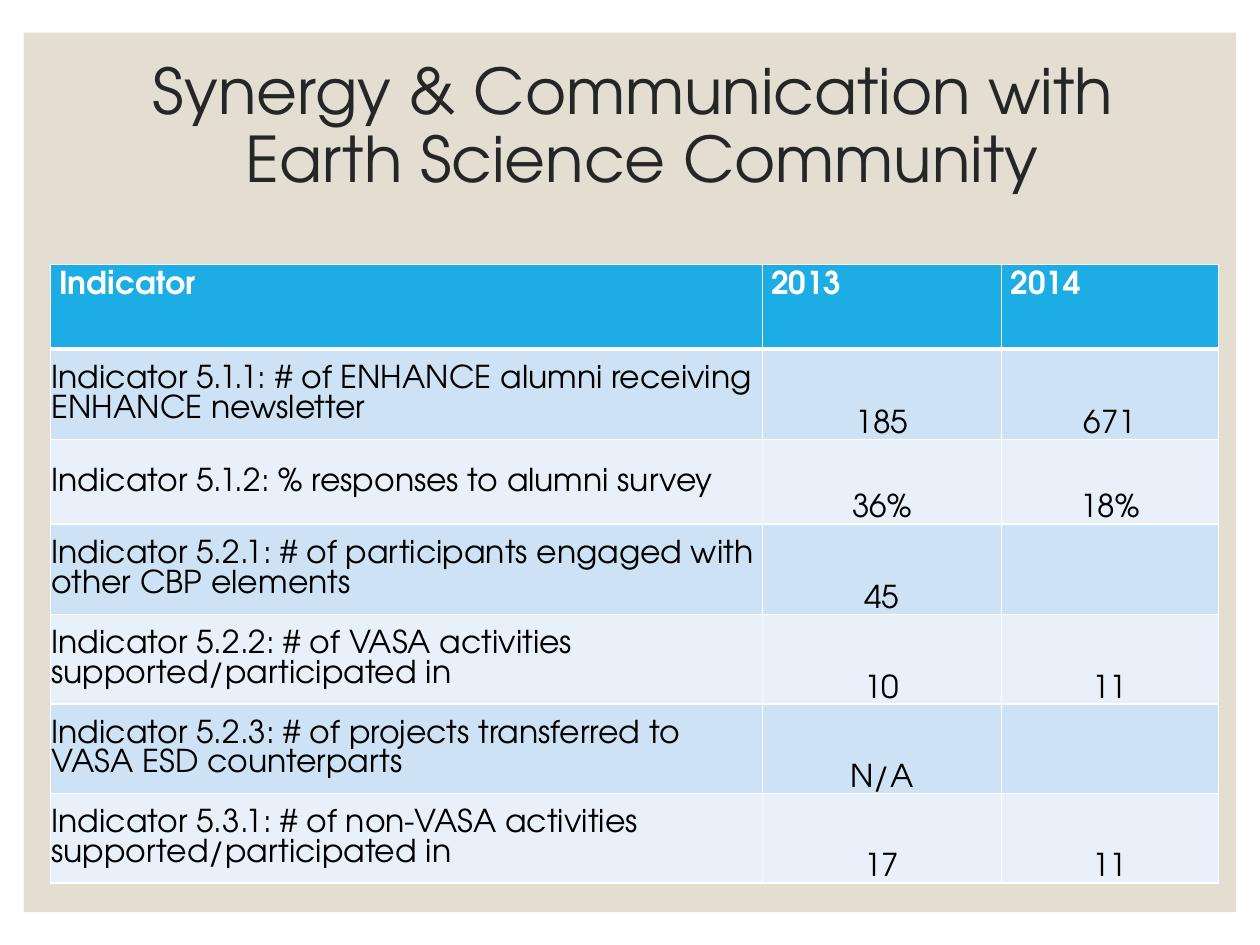
from lxml import etree
from pptx import Presentation
from pptx.dml.color import RGBColor
from pptx.enum.shapes import MSO_SHAPE
from pptx.enum.text import MSO_ANCHOR, PP_ALIGN
from pptx.oxml.ns import qn
from pptx.util import Inches, Pt

RECT = MSO_SHAPE.RECTANGLE
TOP, MIDDLE, BOTTOM = MSO_ANCHOR.TOP, MSO_ANCHOR.MIDDLE, MSO_ANCHOR.BOTTOM
LEFT, CENTER = PP_ALIGN.LEFT, PP_ALIGN.CENTER

FONT = "TeX Gyre Adventor"
WHITE, BLACK, DARK = "FFFFFF", "000000", "262626"
PANEL, HEADER, BANDS = "E3DED1", "1CADE4", ("CDE3F5", "E8F1FA")

TITLE = ["Synergy & Communication with ", "Earth Science Community"]
COLUMN_WIDTHS = [5.65, 1.9, 1.72]
ROW_HEIGHTS = [0.67, 0.72, 0.67, 0.72, 0.71, 0.71, 0.71]
ROWS = [
    ("Indicator", "2013", "2014"),
    ("Indicator 5.1.1: # of ENHANCE alumni receiving ENHANCE newsletter", "185", "671"),
    ("Indicator 5.1.2: % responses to alumni survey", "36%", "18%"),
    ("Indicator 5.2.1: # of participants engaged with other CBP elements", "45", ""),
    ("Indicator 5.2.2: # of VASA activities supported/participated in", "10", "11"),
    ("Indicator 5.2.3: # of projects transferred to VASA ESD counterparts", "N/A", ""),
    ("Indicator 5.3.1: # of non-VASA activities supported/participated in", "17", "11"),
]


def rgb(color):
    return RGBColor.from_string(color)


def style_paragraph(p, size, color, align, spacing, bold=False):
    p.alignment = align
    p.line_spacing = spacing
    p.font.name = FONT
    p.font.size = Pt(size)
    p.font.bold = bold
    p.font.color.rgb = rgb(color)


def set_borders(cell, bottom, top):
    tcPr = cell._tc.get_or_add_tcPr()
    widths = {"a:lnL": 1, "a:lnR": 1, "a:lnT": top, "a:lnB": bottom}
    # Borders come before the fill in a cell's properties
    for i, (tag, width) in enumerate(widths.items()):
        ln = etree.Element(qn(tag), w=str(Pt(width)))
        fill = etree.SubElement(ln, qn("a:solidFill"))
        etree.SubElement(fill, qn("a:srgbClr"), val=WHITE)
        tcPr.insert(i, ln)


def add_panel(slide, left, top, width, height):
    s = slide.shapes.add_shape(RECT, left, top, width, height)
    s.shadow.inherit = False
    s.fill.solid()
    s.fill.fore_color.rgb = rgb(PANEL)
    s.line.fill.background()


def add_title(slide, left, top, width, height):
    tf = slide.shapes.add_textbox(left, top, width, height).text_frame
    tf.word_wrap = True
    tf.vertical_anchor = TOP
    tf.text = "\n".join(TITLE)
    for p in tf.paragraphs:
        style_paragraph(p, 36, DARK, CENTER, 0.9)


def fill_cell(cell, text, row, column):
    header = row == 0
    cell.fill.solid()
    cell.fill.fore_color.rgb = rgb(HEADER if header else BANDS[(row - 1) % 2])
    side, above, below = (0.07, 0.05, 0.05) if header else (0.01, 0.01, 0)
    cell.margin_left = cell.margin_right = Inches(side)
    cell.margin_top, cell.margin_bottom = Inches(above), Inches(below)
    cell.text = text
    p = cell.text_frame.paragraphs[0]
    if header:
        cell.vertical_anchor = TOP
        style_paragraph(p, 18, WHITE, LEFT, 1.0, bold=True)
    else:
        cell.vertical_anchor = BOTTOM if column else MIDDLE
        style_paragraph(p, 18, BLACK, CENTER if column else LEFT, 1.0)
    set_borders(cell, bottom=3 if header else 1, top=3 if row == 1 else 1)


def add_indicator_table(slide, left, top, width, height):
    table = slide.shapes.add_table(
        len(ROWS), len(COLUMN_WIDTHS), left, top, width, height).table
    for column, size in zip(table.columns, COLUMN_WIDTHS):
        column.width = Inches(size)
    for row, size in zip(table.rows, ROW_HEIGHTS):
        row.height = Inches(size)
    for r, texts in enumerate(ROWS):
        for c, text in enumerate(texts):
            fill_cell(table.cell(r, c), text, r, c)


def main():
    prs = Presentation()
    prs.slide_width, prs.slide_height = Inches(10), Inches(7.5)
    slide = prs.slides.add_slide(prs.slide_layouts[6])
    add_panel(slide, Inches(0.19), Inches(0.26), Inches(9.62), Inches(6.98))
    add_indicator_table(slide, Inches(0.4), Inches(2.1), Inches(9.27), Inches(4.91))
    add_title(slide, Inches(0.35), Inches(0.43), Inches(9.49), Inches(1.5))
    prs.save("out.pptx")


if __name__ == "__main__":
    main()
